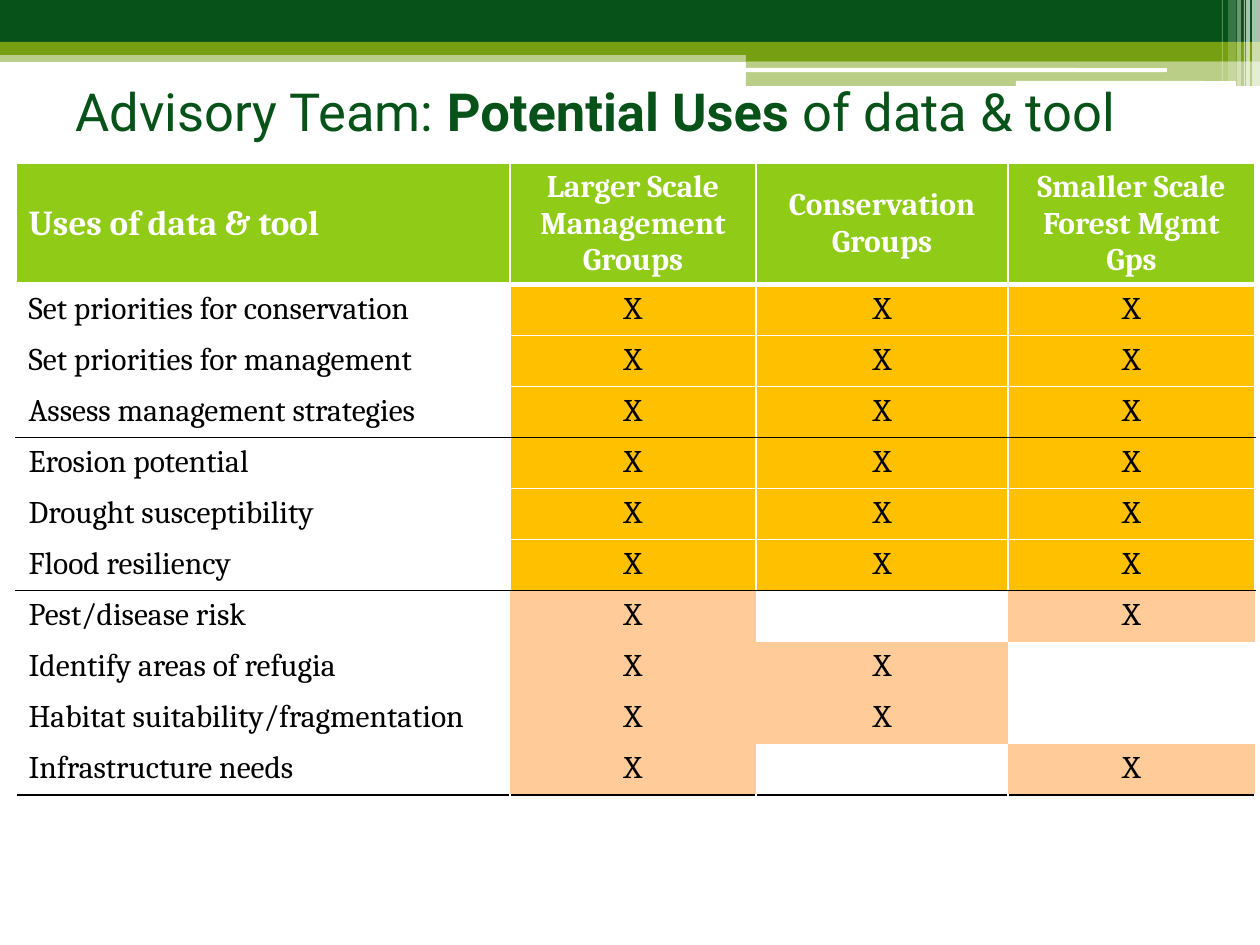
from lxml import etree
from pptx import Presentation
from pptx.dml.color import RGBColor
from pptx.enum.shapes import MSO_SHAPE
from pptx.enum.text import MSO_ANCHOR, MSO_AUTO_SIZE, PP_ALIGN
from pptx.oxml.ns import qn
from pptx.util import Emu, Pt

RECTANGLE, ROUNDED = MSO_SHAPE.RECTANGLE, MSO_SHAPE.ROUNDED_RECTANGLE
TOP, MIDDLE, BOTTOM = MSO_ANCHOR.TOP, MSO_ANCHOR.MIDDLE, MSO_ANCHOR.BOTTOM
LEFT, CENTER = PP_ALIGN.LEFT, PP_ALIGN.CENTER
NO_AUTOFIT = MSO_AUTO_SIZE.NONE

WHITE = RGBColor(0xFF, 0xFF, 0xFF)
BLACK = RGBColor(0x00, 0x00, 0x00)
DARK_GREEN = RGBColor(0x06, 0x52, 0x18)
OLIVE = RGBColor(0x76, 0x9F, 0x11)
LIME = RGBColor(0x8F, 0xCB, 0x17)
AMBER = RGBColor(0xFF, 0xC0, 0x00)
PEACH = RGBColor(0xFF, 0xCC, 0x99)

BANNER = [
    (RECTANGLE, 0, 50, 1260, 12, OLIVE, 50),
    (RECTANGLE, 0, 0, 1260, 43, DARK_GREEN, 100),
    (RECTANGLE, 0, 42, 1260, 13, OLIVE, 100),
    (RECTANGLE, 746, 49, 514, 12, OLIVE, 100),
    (RECTANGLE, 746, 61, 514, 25, OLIVE, 50),
    (ROUNDED, 745, 68, 422, 4, WHITE, 100),
    (ROUNDED, 1016, 81, 220, 5, WHITE, 100),
    (RECTANGLE, 1252, 0, 8, 86, WHITE, 65),
    (RECTANGLE, 1246, 0, 4, 86, WHITE, 65),
    (RECTANGLE, 1244, 0, 1, 86, WHITE, 60),
    (RECTANGLE, 1237, 0, 4, 86, WHITE, 40),
    (RECTANGLE, 1228, 0, 8, 81, WHITE, 20),
    (RECTANGLE, 1222, 0, 1, 81, WHITE, 30),
]
TITLE = [("Advisory Team: ", False), ("Potential Uses ", True), ("of data & tool", False)]
HEADERS = ["Uses of data & tool", "Larger Scale Management Groups",
           "Conservation Groups", "Smaller Scale Forest Mgmt Gps"]
SHARED_USES = ["Set priorities for conservation", "Set priorities for management",
               "Assess management strategies", "Erosion potential",
               "Drought susceptibility", "Flood resiliency"]
PARTIAL_USES = [
    ["Pest/disease risk", "X", "", "X"],
    ["Identify areas of refugia", "X", "X", ""],
    ["Habitat suitability/fragmentation", "X", "X", ""],
    ["Infrastructure needs", "X", "", "X"],
]
ROWS = [HEADERS] + [[use, "X", "X", "X"] for use in SHARED_USES] + PARTIAL_USES + [[""] * 4] * 2
FIRST_PARTIAL = 1 + len(SHARED_USES)
FIRST_EMPTY = FIRST_PARTIAL + len(PARTIAL_USES)
RULES_ABOVE = {4, FIRST_PARTIAL, FIRST_EMPTY}
COLUMN_WIDTHS = [494, 246, 252, 247]
HEADER_HEIGHT, ROW_HEIGHT = 118, 51


def px(length):
    return Emu(round(length * 914400 / 126))


def edge_style(row):
    if row in RULES_ABOVE:
        return BLACK, 1
    if row == 1:
        return WHITE, 3
    if FIRST_PARTIAL < row < FIRST_EMPTY:
        return None, 1
    return WHITE, 1


class SlideBuilder:
    title_font = "Roboto"
    table_font = "Cambria"

    def __init__(self, slide):
        self.slide = slide

    def bar(self, kind, left, top, width, height, color, opacity):
        shape = self.slide.shapes.add_shape(kind, px(left), px(top), px(width), px(height))
        shape.shadow.inherit = False
        shape.line.fill.background()
        shape.fill.solid()
        shape.fill.fore_color.rgb = color
        if opacity < 100:
            color_element = shape._element.spPr.find(qn("a:solidFill"))[0]
            etree.SubElement(color_element, qn("a:alpha"), val=str(opacity * 1000))

    def title(self, pieces, left, top, width, height):
        shape = self.slide.shapes.title
        shape.left, shape.top, shape.width, shape.height = map(px, (left, top, width, height))
        self.slide.shapes._spTree.append(shape._element)
        shape.text_frame.auto_size = NO_AUTOFIT
        shape.text_frame.vertical_anchor = MIDDLE
        paragraph = shape.text_frame.paragraphs[0]
        paragraph.alignment = LEFT
        for text, bold in pieces:
            run = paragraph.add_run()
            run.text = text
            self.style(run.font, self.title_font, 30, DARK_GREEN, bold)

    def style(self, font, name, size, color, bold):
        font.name, font.size, font.bold = name, Pt(size), bold
        font.color.rgb = color

    def table(self, rows, left, top):
        height = HEADER_HEIGHT + ROW_HEIGHT * (len(rows) - 1)
        frame = self.slide.shapes.add_table(
            len(rows), len(COLUMN_WIDTHS), px(left), px(top), px(sum(COLUMN_WIDTHS)), px(height))
        table = frame.table
        table.horz_banding = False
        for column, width in zip(table.columns, COLUMN_WIDTHS):
            column.width = px(width)
        for row_index, values in enumerate(rows):
            table.rows[row_index].height = px(ROW_HEIGHT if row_index else HEADER_HEIGHT)
            for column_index, value in enumerate(values):
                self.cell(table.cell(row_index, column_index), value, row_index, column_index)

    def cell(self, cell, value, row, column):
        header = row == 0
        partial = FIRST_PARTIAL <= row < FIRST_EMPTY
        self.border(cell, "lnL", None if partial else WHITE, 1)
        self.border(cell, "lnR", None if partial else WHITE, 1)
        self.border(cell, "lnT", *edge_style(row))
        self.border(cell, "lnB", *edge_style(row + 1))
        cell.fill.solid()
        if header:
            cell.fill.fore_color.rgb = LIME
        elif column and value:
            cell.fill.fore_color.rgb = PEACH if partial else AMBER
        else:
            cell.fill.fore_color.rgb = WHITE
        cell.vertical_anchor = TOP if not header else BOTTOM if column == 3 else MIDDLE
        cell.text_frame.text = value
        paragraph = cell.text_frame.paragraphs[0]
        paragraph.alignment = CENTER if column else LEFT
        size = 20 if header and not column else 18
        for run in paragraph.runs:
            self.style(run.font, self.table_font, size, WHITE if header else BLACK, header)

    def border(self, cell, side, color, points):
        properties = cell._tc.get_or_add_tcPr()
        line = etree.SubElement(properties, qn(f"a:{side}"), w=str(Pt(points)))
        if color is None:
            etree.SubElement(line, qn("a:noFill"))
        else:
            fill = etree.SubElement(line, qn("a:solidFill"))
            etree.SubElement(fill, qn("a:srgbClr"), val=str(color))


def main():
    presentation = Presentation()
    presentation.slide_width, presentation.slide_height = px(1260), px(945)
    builder = SlideBuilder(presentation.slides.add_slide(presentation.slide_layouts[5]))
    for bar in BANNER:
        builder.bar(*bar)
    builder.title(TITLE, 63, 58, 1134, 105)
    builder.table(ROWS, 16, 163)
    presentation.save("out.pptx")


if __name__ == "__main__":
    main()
